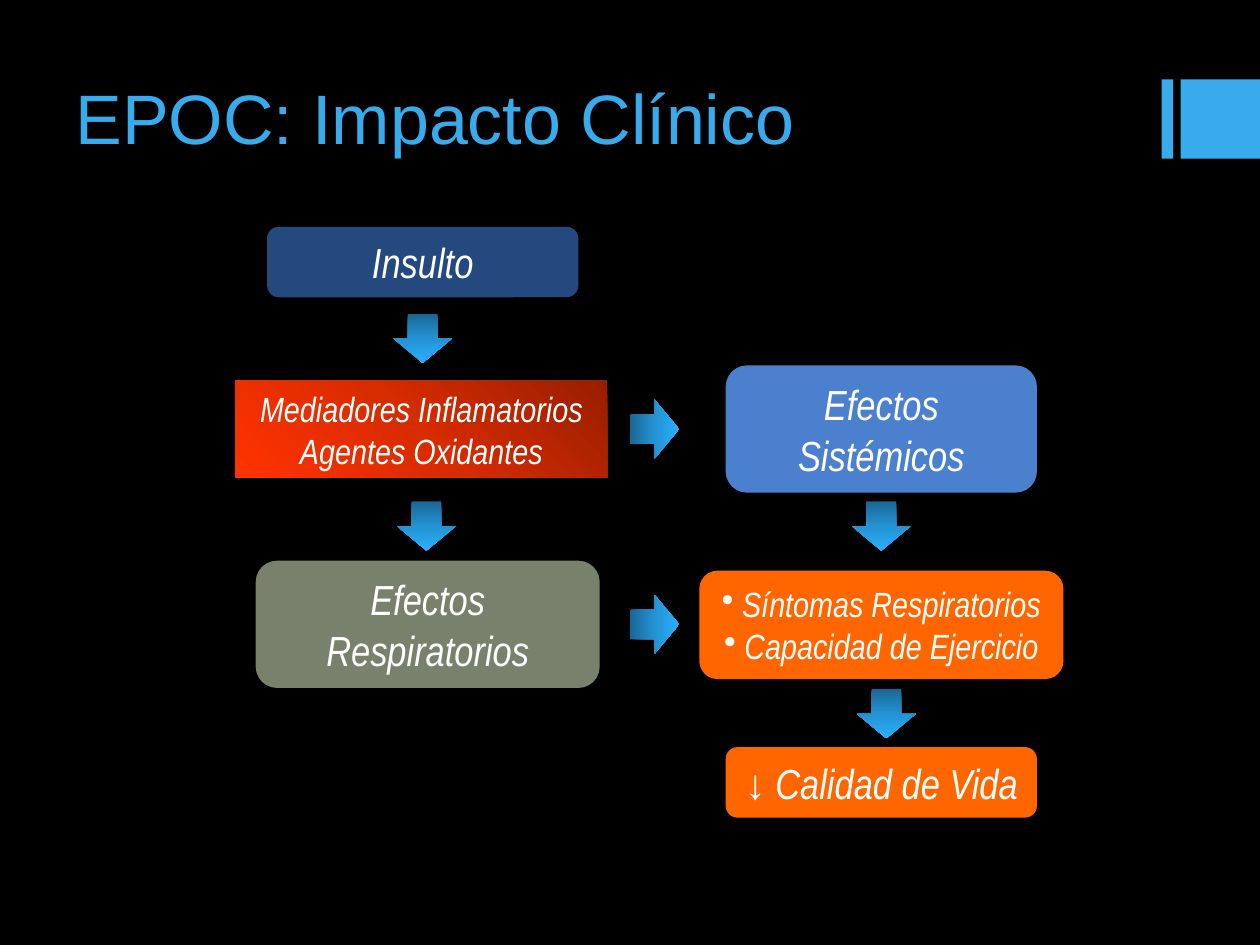
from copy import deepcopy

from lxml.etree import SubElement
from pptx import Presentation
from pptx.dml.color import RGBColor
from pptx.enum.shapes import MSO_SHAPE
from pptx.enum.text import MSO_ANCHOR, PP_ALIGN
from pptx.oxml.ns import qn
from pptx.util import Inches, Pt

SKY, ORANGE, WHITE = "38ABED", "FF6600", "FFFFFF"
ARROW_BLUES = ["196794", "2493D3", "2AAFFB"]
REDS = ["971E00", "D72B00", "FF3300"]
ARROW_W, ARROW_H = 0.47, 0.39

# left, top, width, height, fill, text size, paragraphs
ROUNDED_BOXES = [
    (2.12, 1.8, 2.47, 0.56, "23497F", 24, ["Insulto"]),
    (2.03, 4.45, 2.73, 1.01, "78816C", 24, ["Efectos Respiratorios"]),
    (5.76, 2.9, 2.47, 1.01, "4A80CD", 24, ["Efectos Sistémicos"]),
]
# left, top, rotation
ARROWS = [
    (3.12, 2.49, 0), (3.15, 3.98, 0), (6.76, 3.98, 0), (6.8, 5.47, 0),
    (4.96, 3.21, 270), (4.96, 4.76, 270),
]


def rgb(value):
    return RGBColor.from_string(value)


def fill_solid(fill, color):
    fill.solid()
    fill.fore_color.rgb = rgb(color)


def fill_gradient(sp, colors, angle):
    """Spread three colours evenly; the angle runs counter-clockwise."""
    sp.fill.gradient()
    sp.fill.gradient_angle = angle
    stops = sp._element.spPr.find(".//" + qn("a:gsLst"))
    stops.insert(1, deepcopy(stops[0]))
    for i, (stop, color) in enumerate(zip(sp.fill.gradient_stops, colors)):
        stop.color.rgb = rgb(color)
        stop.position = i / 2


def add_shape(s, kind, left, top, width, height, color=None):
    sp = s.shapes.add_shape(kind, *map(Inches, (left, top, width, height)))
    sp.shadow.inherit = False
    sp.line.fill.background()
    if color:
        fill_solid(sp.fill, color)
    return sp


def add_run(p, text, color=WHITE, **formats):
    r = p.add_run()
    r.text = text
    for name, value in formats.items():
        setattr(r.font, name, value)
    r.font.color.rgb = rgb(color)


def add_bullet(p):
    pPr = p._p.get_or_add_pPr()
    pPr.set("marL", "0")
    pPr.set("indent", "0")
    SubElement(pPr, qn("a:buChar")).set("char", "•")


def write_box(sp, size, paragraphs, bullets=False):
    tf = sp.text_frame
    tf.word_wrap = True
    tf.vertical_anchor = MSO_ANCHOR.MIDDLE
    for i, text in enumerate(paragraphs):
        p = tf.add_paragraph() if i else tf.paragraphs[0]
        p.alignment = PP_ALIGN.CENTER
        if bullets:
            add_bullet(p)
        # The down arrow stays upright, the words are italic
        symbol, words = ("↓ ", text[2:]) if text.startswith("↓ ") else ("", text)
        formats = {"name": "Arial Narrow", "size": Pt(size)}
        if symbol:
            add_run(p, symbol, **formats)
        add_run(p, words, italic=True, **formats)


def add_arrow(s, left, top, rotation):
    sp = add_shape(s, MSO_SHAPE.DOWN_ARROW, left, top, ARROW_W, ARROW_H)
    fill_gradient(sp, ARROW_BLUES, 270)
    sp.rotation = rotation


def add_title(s, text):
    title = s.shapes.title
    title.left, title.top = Inches(0.5), Inches(0.31)
    title.width, title.height = Inches(9), Inches(1)
    tf = title.text_frame
    tf.vertical_anchor = MSO_ANCHOR.BOTTOM
    p = tf.paragraphs[0]
    p.alignment = PP_ALIGN.LEFT
    add_run(p, text, SKY, name="Arial", size=Pt(40))


def main():
    prs = Presentation()
    prs.slide_width, prs.slide_height = Inches(10), Inches(7.5)
    s = prs.slides.add_slide(prs.slide_layouts[5])
    fill_solid(s.background.fill, "000000")
    add_title(s, "EPOC: Impacto Clínico")
    for left, width in ((9.22, 0.09), (9.37, 0.63)):
        add_shape(s, MSO_SHAPE.RECTANGLE, left, 0.63, width, 0.63, SKY)

    for *frame, color, size, paragraphs in ROUNDED_BOXES:
        sp = add_shape(s, MSO_SHAPE.ROUNDED_RECTANGLE, *frame, color)
        write_box(sp, size, paragraphs)

    mediators = add_shape(s, MSO_SHAPE.RECTANGLE, 1.87, 3.02, 2.95, 0.77)
    fill_gradient(mediators, REDS, 225)
    write_box(mediators, 20, ["Mediadores Inflamatorios", "Agentes Oxidantes"])

    symptoms = add_shape(s, MSO_SHAPE.ROUNDED_RECTANGLE,
                         5.55, 4.53, 2.89, 0.86, ORANGE)
    write_box(symptoms, 20,
              [" Síntomas Respiratorios", " Capacidad de Ejercicio"], bullets=True)

    quality = add_shape(s, MSO_SHAPE.ROUNDED_RECTANGLE,
                        5.76, 5.93, 2.47, 0.56, ORANGE)
    write_box(quality, 24, ["↓ Calidad de Vida"])

    for arrow in ARROWS:
        add_arrow(s, *arrow)
    prs.save("out.pptx")


if __name__ == "__main__":
    main()
